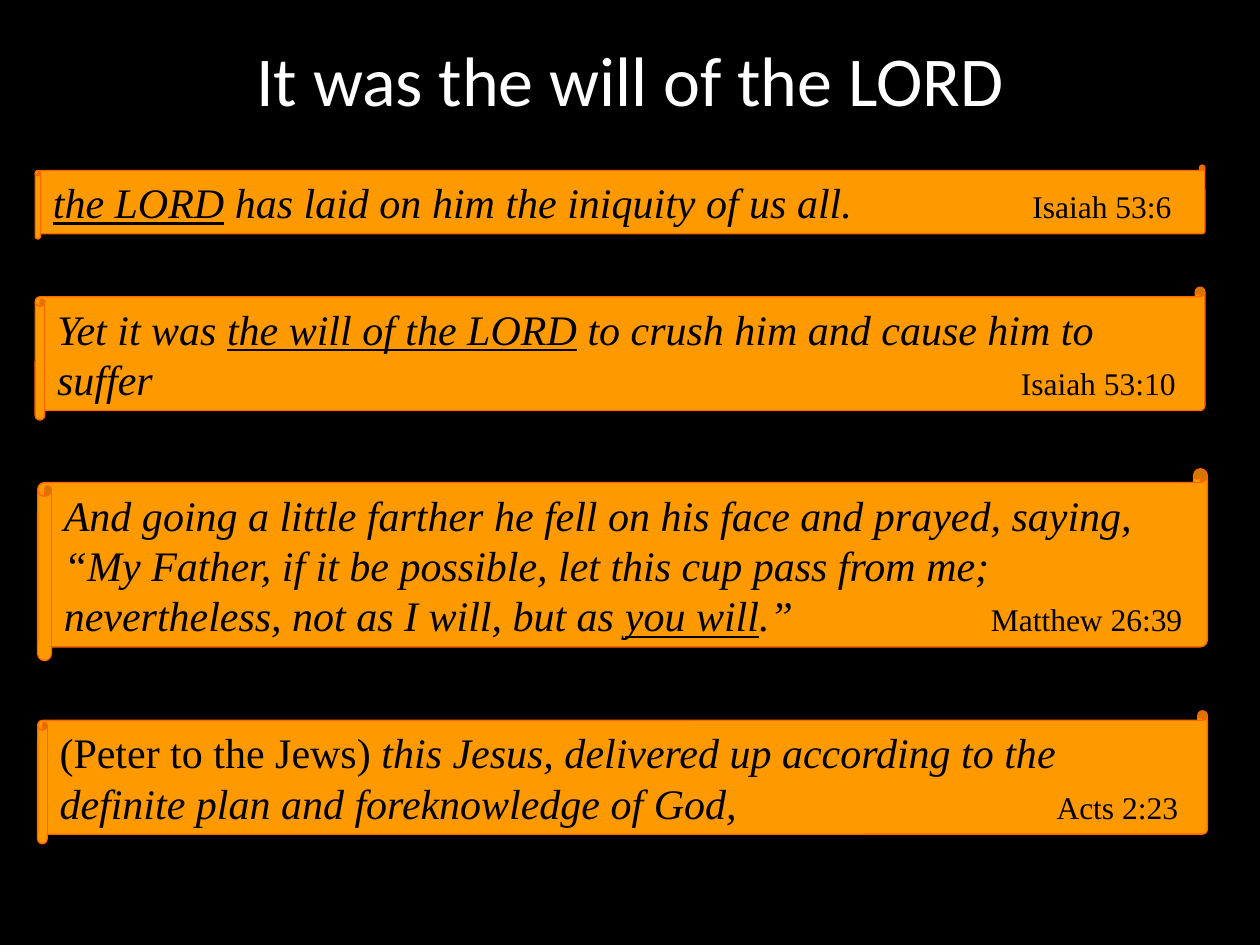
from lxml.etree import SubElement
from pptx import Presentation
from pptx.dml.color import RGBColor
from pptx.enum.shapes import MSO_SHAPE
from pptx.enum.text import MSO_ANCHOR, MSO_AUTO_SIZE, PP_ALIGN
from pptx.oxml.ns import qn
from pptx.util import Cm, Pt

BLACK = RGBColor(0x00, 0x00, 0x00)
WHITE = RGBColor(0xFF, 0xFF, 0xFF)
ORANGE = RGBColor(0xFF, 0x99, 0x00)
DARK_ORANGE = RGBColor(0xFF, 0x66, 0x00)

# Content: each verse is a list of (text, style) parts and a reference
HEADING = "It was the will of the LORD"
VERSES = [
    {"left": 0.71, "top": 3.33, "lines": 1, "reference": "Isaiah 53:6",
     "parts": [("the LORD", "stressed"),
               (" has laid on him the iniquity of us all.", "quote")]},
    {"left": 0.71, "top": 5.79, "lines": 2, "reference": "Isaiah 53:10",
     "parts": [("Yet it was ", "quote"),
               ("the will of the LORD", "stressed"),
               (" to crush him and cause him to suffer", "quote")]},
    {"left": 0.76, "top": 9.45, "lines": 3, "reference": "Matthew 26:39",
     "parts": [("And going a little farther he fell on his face and prayed, "
                "saying, “My Father, if it be possible, let this cup pass "
                "from me; nevertheless, not as I will, but as ", "quote"),
               ("you will", "stressed"),
               (".”", "quote")]},
    {"left": 0.76, "top": 14.33, "lines": 2, "reference": "Acts 2:23",
     "parts": [("(Peter to the Jews) ", "plain"),
               ("this Jesus, delivered up according to the definite plan "
                "and foreknowledge of God,", "quote")]},
]

# Formats
VERSE_FONT = {"name": "Times New Roman", "size": Pt(24)}
STYLES = {
    "plain": VERSE_FONT,
    "quote": VERSE_FONT | {"italic": True},
    "stressed": VERSE_FONT | {"italic": True, "underline": True},
    "reference": VERSE_FONT | {"size": Pt(18)},
}
HEADING_FONT = {"name": "Calibri", "size": Pt(40)}
SCROLL_WIDTH, SCROLL_PADDING, LINE_HEIGHT = 23.58, 0.3, 1.19
REFERENCE_EDGE = Cm(22.55)


def format_font(font, values, color):
    for attribute, value in values.items():
        setattr(font, attribute, value)
    font.color.rgb = color


def add_right_tab(paragraph, position):
    tabs = SubElement(paragraph._p.get_or_add_pPr(), qn("a:tabLst"))
    SubElement(tabs, qn("a:tab"), pos=str(int(position)), algn="r")


def add_verse(slide, verse):
    height = SCROLL_PADDING + LINE_HEIGHT * verse["lines"]
    scroll = slide.shapes.add_shape(
        MSO_SHAPE.HORIZONTAL_SCROLL, Cm(verse["left"]), Cm(verse["top"]),
        Cm(SCROLL_WIDTH), Cm(height))
    scroll.adjustments[0] = 0.072
    scroll.shadow.inherit = False
    scroll.fill.solid()
    scroll.fill.fore_color.rgb = ORANGE
    scroll.line.color.rgb = DARK_ORANGE
    scroll.line.width = Pt(0.75)

    frame = scroll.text_frame
    frame.word_wrap = True
    frame.auto_size = MSO_AUTO_SIZE.SHAPE_TO_FIT_TEXT
    frame.vertical_anchor = MSO_ANCHOR.MIDDLE
    paragraph = frame.paragraphs[0]
    paragraph.alignment = PP_ALIGN.LEFT
    add_right_tab(paragraph, REFERENCE_EDGE)
    for text, style in verse["parts"] + [("\t" + verse["reference"], "reference")]:
        run = paragraph.add_run()
        run.text = text
        format_font(run.font, STYLES[style], BLACK)


def main():
    deck = Presentation()
    deck.slide_width, deck.slide_height = Cm(25.4), Cm(19.05)
    slide = deck.slides.add_slide(deck.slide_layouts[5])
    slide.background.fill.solid()
    slide.background.fill.fore_color.rgb = BLACK

    # Heading
    heading = slide.shapes.title
    heading.left, heading.top = Cm(0), Cm(0)
    heading.width, heading.height = deck.slide_width, Cm(3.18)
    heading.text_frame.text = HEADING
    heading.text_frame.vertical_anchor = MSO_ANCHOR.MIDDLE
    line = heading.text_frame.paragraphs[0]
    line.alignment = PP_ALIGN.CENTER
    format_font(line.runs[0].font, HEADING_FONT, WHITE)

    # Scrolls with verses
    for verse in VERSES:
        add_verse(slide, verse)

    deck.save("out.pptx")


if __name__ == "__main__":
    main()
